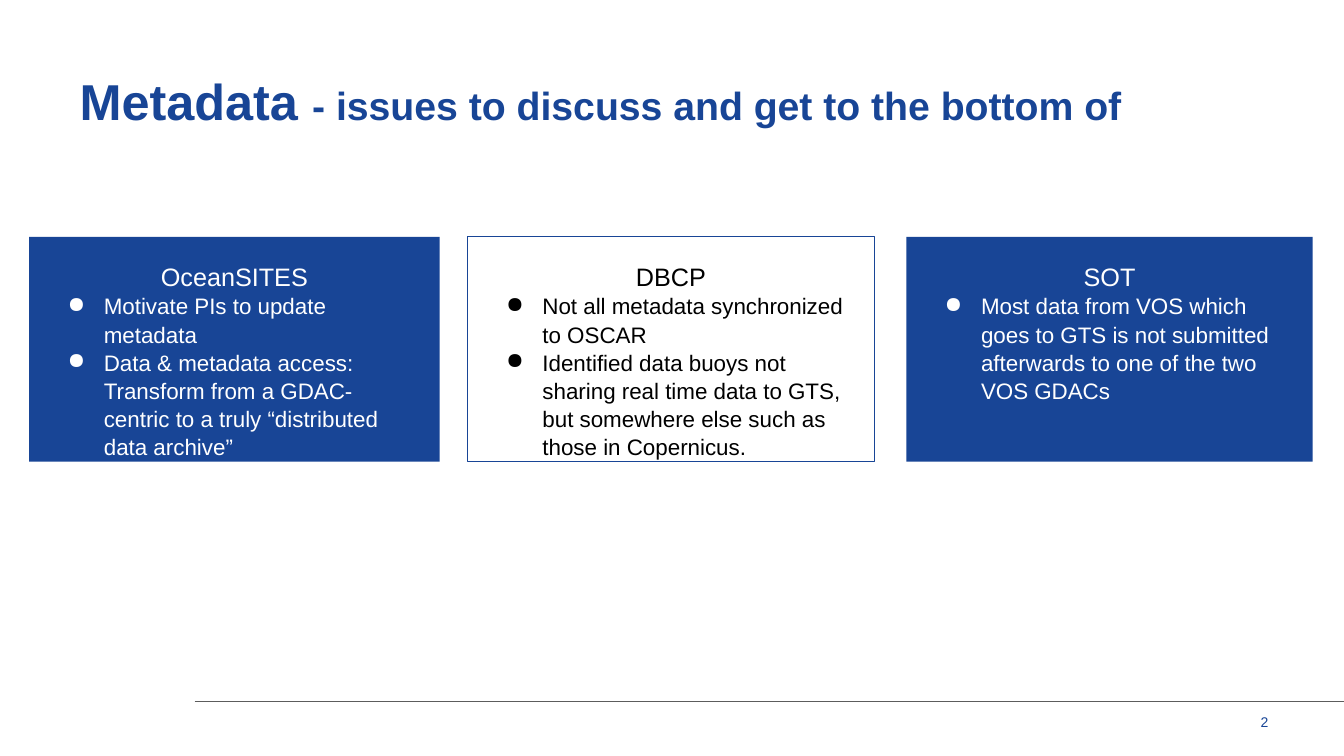
"""Build the metadata issues slide with three topic cards."""
from lxml.etree import SubElement
from pptx import Presentation
from pptx.dml.color import RGBColor
from pptx.enum.shapes import MSO_CONNECTOR, MSO_SHAPE
from pptx.enum.text import MSO_ANCHOR, PP_ALIGN
from pptx.oxml.ns import qn
from pptx.util import Inches, Pt

BLUE = RGBColor(0x18, 0x45, 0x96)
GRAY = RGBColor(0x5C, 0x5C, 0x5C)
WHITE = RGBColor(0xFF, 0xFF, 0xFF)
BLACK = RGBColor(0x00, 0x00, 0x00)
FONT = "Arial"

TITLE = [("Metadata ", 36), ("- issues to discuss and get to the bottom of", 28)]
PAGE_NUMBER = "2"
CARDS = [
    ("OceanSITES", 4.07, True, [
        "Motivate PIs to update metadata",
        "Data & metadata access: Transform from a GDAC-centric to a truly “distributed data archive”",
    ]),
    ("DBCP", 4.03, False, [
        "Not all metadata synchronized to OSCAR",
        "Identified data buoys not sharing real time data to GTS, "
        "but somewhere else such as those in Copernicus.",
    ]),
    ("SOT", 4.03, True, [
        "Most data from VOS which goes to GTS is not submitted "
        "afterwards to one of the two VOS GDACs",
    ]),
]
CARD_LEFT, CARD_TOP, CARD_HEIGHT, CARD_PITCH = 0.29, 2.35, 2.23, 4.35


def prepare_frame(shape, inset):
    frame = shape.text_frame
    frame.word_wrap = True
    frame.vertical_anchor = MSO_ANCHOR.TOP
    frame.margin_left = frame.margin_right = Inches(inset)
    frame.margin_top = frame.margin_bottom = Inches(inset)
    return frame


def add_run(paragraph, text, size, color, bold=False):
    run = paragraph.add_run()
    run.text = text
    run.font.name = FONT
    run.font.size = Pt(size)
    run.font.bold = bold
    run.font.color.rgb = color


def add_text(slide, box, runs, spacing, align, bold=False):
    shape = slide.shapes.add_textbox(*map(Inches, box))
    paragraph = prepare_frame(shape, 0).paragraphs[0]
    paragraph.alignment = align
    paragraph.line_spacing = spacing
    for text, size in runs:
        add_run(paragraph, text, size, BLUE, bold)


def add_bullet(paragraph, color):
    properties = paragraph._p.get_or_add_pPr()
    properties.set("marL", str(Inches(0.5)))
    properties.set("indent", str(Inches(-0.36)))
    bullet_color = SubElement(properties, qn("a:buClr"))
    SubElement(bullet_color, qn("a:srgbClr"), val=str(color))
    SubElement(properties, qn("a:buChar"), char="●")


def add_card(slide, left, heading, width, filled, points):
    box = map(Inches, (left, CARD_TOP, width, CARD_HEIGHT))
    shape = slide.shapes.add_shape(MSO_SHAPE.RECTANGLE, *box)
    shape.shadow.inherit = False
    if filled:
        shape.fill.solid()
        shape.fill.fore_color.rgb = BLUE
        shape.line.fill.background()
    else:
        shape.fill.background()
        shape.line.color.rgb = BLUE
        shape.line.width = Pt(0.75)
    color = WHITE if filled else BLACK
    frame = prepare_frame(shape, 0.24)
    frame.paragraphs[0].alignment = PP_ALIGN.CENTER
    add_run(frame.paragraphs[0], heading, 18, color)
    for point in points:
        paragraph = frame.add_paragraph()
        add_bullet(paragraph, color)
        paragraph.alignment = PP_ALIGN.LEFT
        paragraph.line_spacing = 1.05
        add_run(paragraph, point, 16, color)


def main():
    presentation = Presentation()
    presentation.slide_width = Inches(13.33)
    presentation.slide_height = Inches(7.5)
    slide = presentation.slides.add_slide(presentation.slide_layouts[6])

    ends = map(Inches, (1.93, 6.96, 13.33, 6.96))
    footer_line = slide.shapes.add_connector(MSO_CONNECTOR.STRAIGHT, *ends)
    footer_line.line.color.rgb = GRAY
    footer_line.line.width = Pt(0.75)
    SubElement(footer_line._element.spPr, qn("a:effectLst"))

    add_text(slide, (0.79, 0.79, 11.76, 0.63), TITLE, 0.85, PP_ALIGN.LEFT, bold=True)
    add_text(slide, (12.3, 7.1, 0.28, 0.21), [(PAGE_NUMBER, 10)], 0.9, PP_ALIGN.RIGHT)
    for index, card in enumerate(CARDS):
        add_card(slide, CARD_LEFT + index * CARD_PITCH, *card)
    presentation.save("out.pptx")


if __name__ == "__main__":
    main()
